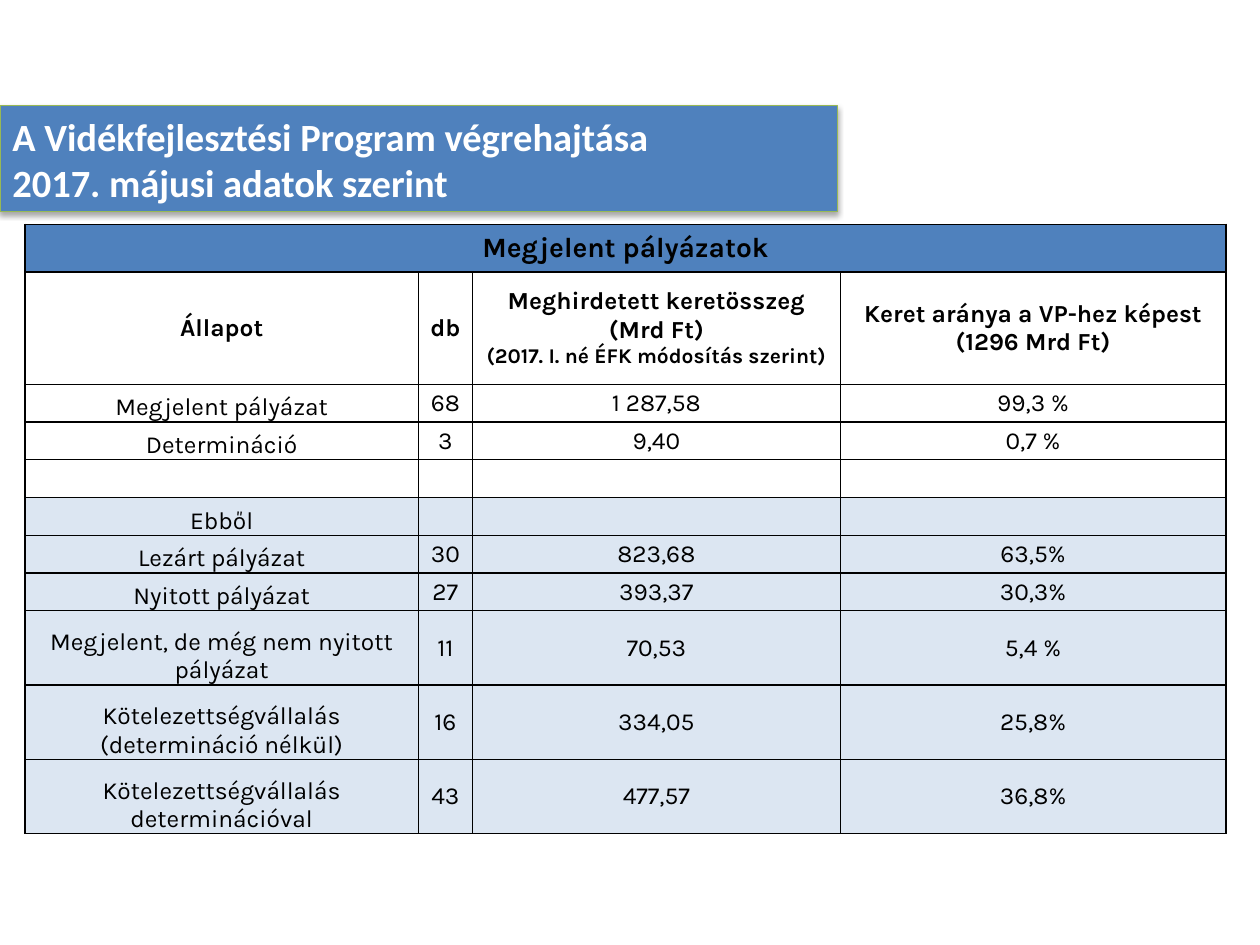
from dataclasses import dataclass

from lxml import etree
from pptx import Presentation
from pptx.dml.color import RGBColor
from pptx.enum.shapes import MSO_SHAPE
from pptx.enum.text import MSO_ANCHOR, PP_ALIGN
from pptx.oxml.ns import qn
from pptx.util import Inches, Pt

RECTANGLE = MSO_SHAPE.RECTANGLE
MIDDLE, BOTTOM = MSO_ANCHOR.MIDDLE, MSO_ANCHOR.BOTTOM
LEFT, CENTER = PP_ALIGN.LEFT, PP_ALIGN.CENTER


@dataclass(frozen=True)
class Theme:
    """Colours, fonts and type sizes of the slide."""
    blue: str = "4F81BD"
    pale: str = "DCE6F2"
    green: str = "98B955"
    black: str = "000000"
    white: str = "FFFFFF"
    title_font: str = "Calibri"
    table_font: str = "Karla"
    title: int = 22
    heading: int = 16
    body: int = 14
    note: int = 12


THEME = Theme()
WIDTH, HEIGHT = Inches(10), Inches(7.5)
TITLE = ["A Vidékfejlesztési Program végrehajtása", "2017. májusi adatok szerint"]
HEADING = "Megjelent pályázatok"
NOTE = "(2017. I. né ÉFK módosítás szerint)"
COLUMNS = [
    ["Állapot"],
    ["db"],
    ["Meghirdetett keretösszeg", "(Mrd Ft)", NOTE],
    ["Keret aránya a VP-hez képest", "(1296 Mrd Ft)"],
]
PUBLISHED = [
    ("Megjelent pályázat", "68", "1 287,58", "99,3 %"),
    ("Determináció", "3", "9,40", "0,7 %"),
    ("", "", "", ""),
]
BREAKDOWN = [
    ("Ebből", "", "", ""),
    ("Lezárt pályázat", "30", "823,68", "63,5%"),
    ("Nyitott pályázat", "27", "393,37", "30,3%"),
    ("Megjelent, de még nem nyitott pályázat", "11", "70,53", "5,4 %"),
    ("Kötelezettségvállalás\n(determináció nélkül)", "16", "334,05", "25,8%"),
    ("Kötelezettségvállalás determinációval", "43", "477,57", "36,8%"),
]
COLUMN_WIDTHS = [3.12, 0.43, 2.92, 3.06]
ROW_HEIGHTS = [0.38, 0.89] + [0.3] * 6 + [0.59] * 3


def rgb(color):
    """Turn a hex string into a colour."""
    return RGBColor.from_string(color)


def write(tf, lines, font, size, color, bold, align):
    """Write one paragraph per line, with the note line smaller."""
    for i, line in enumerate(lines):
        p = tf.paragraphs[0] if i == 0 else tf.add_paragraph()
        p.text = line
        p.alignment = align
        p.font.name = font
        p.font.size = Pt(THEME.note if line == NOTE else size)
        p.font.bold = bold
        p.font.color.rgb = rgb(color)


def add_shadow(sp):
    """Give a shape a soft shadow straight below it."""
    sp.shadow.inherit = False
    effects = sp._element.spPr.find(qn("a:effectLst"))
    shadow = etree.SubElement(effects, qn("a:outerShdw"), blurRad=str(Pt(3.1)),
                              dist=str(Pt(1.8)), dir="5400000", rotWithShape="0")
    color = etree.SubElement(shadow, qn("a:srgbClr"), val=THEME.black)
    etree.SubElement(color, qn("a:alpha"), val="35000")


def add_borders(cell):
    """Draw a thin black line on each side of a cell."""
    tc_pr = cell._tc.get_or_add_tcPr()
    for side in ("lnL", "lnR", "lnT", "lnB"):
        line = etree.SubElement(tc_pr, qn(f"a:{side}"), w=str(Pt(1)))
        fill = etree.SubElement(line, qn("a:solidFill"))
        etree.SubElement(fill, qn("a:srgbClr"), val=THEME.black)


def format_cell(cell, lines, fill=None, size=THEME.body, bold=False, anchor=MIDDLE):
    """Fill, frame and write one table cell."""
    cell.margin_left = cell.margin_right = cell.margin_top = cell.margin_bottom = 0
    cell.vertical_anchor = anchor
    add_borders(cell)
    if fill:
        cell.fill.solid()
        cell.fill.fore_color.rgb = rgb(fill)
    else:
        cell.fill.background()
    write(cell.text_frame, lines, THEME.table_font, size, THEME.black, bold, CENTER)


def add_title(slide, left, top, width, height):
    """Place the title banner in the given box."""
    sp = slide.shapes.add_shape(RECTANGLE, left, top, width, height)
    sp.fill.solid()
    sp.fill.fore_color.rgb = rgb(THEME.blue)
    sp.line.color.rgb = rgb(THEME.green)
    sp.line.width = Pt(0.75)
    add_shadow(sp)
    tf = sp.text_frame
    tf.word_wrap = True
    tf.vertical_anchor = MIDDLE
    write(tf, TITLE, THEME.title_font, THEME.title, THEME.white, True, LEFT)


def add_calls_table(slide, left, top, width, height):
    """Place the table of calls in the given box, sharing it by column and row."""
    table = slide.shapes.add_table(len(ROW_HEIGHTS), len(COLUMN_WIDTHS),
                                   left, top, width, height).table
    table.first_row = table.horz_banding = False
    for column, share in zip(table.columns, COLUMN_WIDTHS):
        column.width = int(width * share / sum(COLUMN_WIDTHS))
    for row, share in zip(table.rows, ROW_HEIGHTS):
        row.height = int(height * share / sum(ROW_HEIGHTS))

    for c, lines in enumerate(COLUMNS):
        format_cell(table.cell(0, c), [HEADING] if c == 0 else [""],
                    THEME.blue, THEME.heading, True)
        format_cell(table.cell(1, c), lines, bold=True)
    table.cell(0, 0).merge(table.cell(0, len(COLUMNS) - 1))

    for r, values in enumerate(PUBLISHED + BREAKDOWN):
        fill = THEME.pale if r >= len(PUBLISHED) else None
        for c, value in enumerate(values):
            format_cell(table.cell(r + 2, c), value.split("\n"), fill,
                        anchor=BOTTOM if c == 0 else MIDDLE)


def main():
    """Build and save the slide."""
    prs = Presentation()
    prs.slide_width, prs.slide_height = WIDTH, HEIGHT
    slide = prs.slides.add_slide(prs.slide_layouts[6])
    add_calls_table(slide, Inches(0.2), Inches(1.78),
                    Inches(sum(COLUMN_WIDTHS)), Inches(sum(ROW_HEIGHTS)))
    add_title(slide, 0, Inches(0.84), Inches(6.65), Inches(0.84))
    prs.save("out.pptx")


if __name__ == "__main__":
    main()
